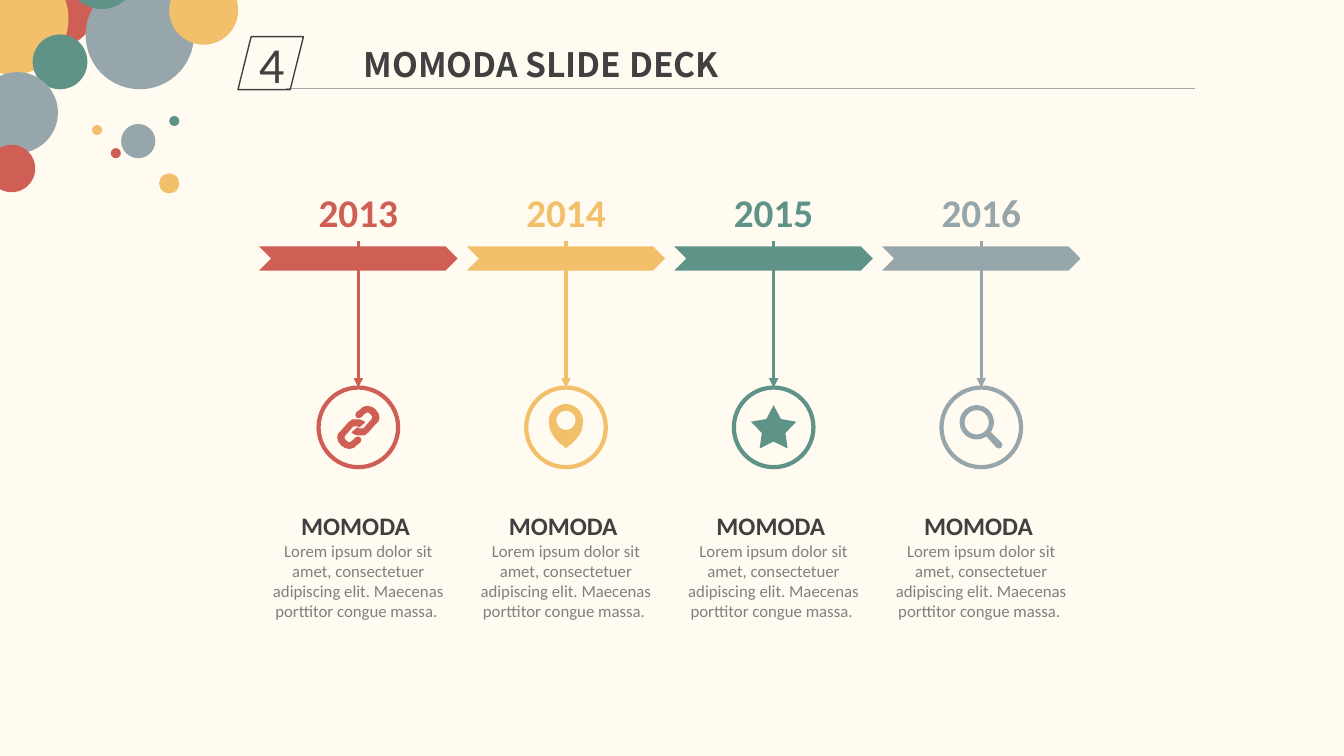
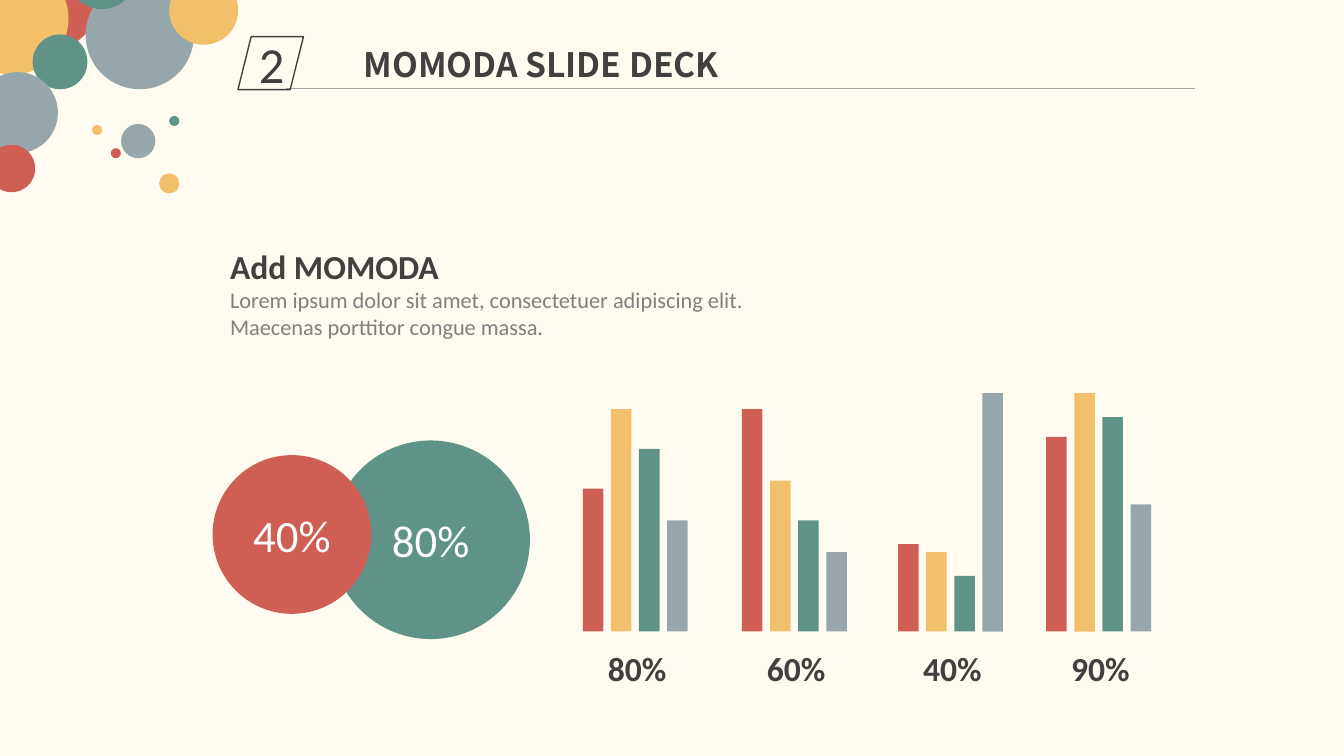
import dataclasses
import math

import lxml.etree
import pptx
import pptx.dml.color
import pptx.enum.shapes
import pptx.enum.text
import pptx.oxml.ns
import pptx.util

KIND = pptx.enum.shapes.MSO_SHAPE
ALIGN = pptx.enum.text.PP_ALIGN
ANCHOR = pptx.enum.text.MSO_ANCHOR


@dataclasses.dataclass(frozen=True)
class Theme:
    """Colours, fonts and type sizes of the deck."""
    back: str = "FFFBF0"
    red: str = "CF5F55"
    gold: str = "F2C06B"
    green: str = "5F9387"
    gray: str = "97A6AB"
    dark: str = "404040"
    soft: str = "808080"
    rule: str = "A6A6A6"
    white: str = "FFFFFF"
    face: str = "Calibri"
    head: str = "Noto Sans CJK SC"
    mark: int = 36
    big: int = 32
    year: int = 28
    title: int = 24
    name: int = 18
    body: int = 16
    small: int = 12

    @property
    def tones(self):
        """Give the four accent colours in order."""
        return self.red, self.gold, self.green, self.gray


THEME = Theme()
WIDE, HIGH = 133.4, 75
LEFT, PITCH, SPAN = 25.72, 20.61, 19.7
FLOOR, UNIT, BAR, STEP = 62.65, 3.94, 2.04, 2.79
LOREM = ("Lorem ipsum dolor sit amet, consectetuer adipiscing elit. "
         "Maecenas porttitor congue massa.")
BUBBLES = (
    (0.4, -4.4, 9.3, THEME.red), (-4.3, -3.7, 11.1, THEME.gold),
    (3.24, 3.42, 5.44, THEME.green), (-2.3, 7.15, 8.05, THEME.gray),
    (8.5, -1.9, 10.75, THEME.gray), (6.7, -5.9, 6.8, THEME.green),
    (-1.2, 14.37, 4.7, THEME.red), (12.02, 12.3, 3.4, THEME.gray),
    (11, 14.7, 1, THEME.red), (9.14, 12.4, 1, THEME.gold),
    (16.8, 11.5, 1, THEME.green), (15.8, 17.2, 2, THEME.gold),
    (16.8, -2.4, 6.84, THEME.gold))
LINK = (
    (-2, -8), (1, -8), (4, -7), (7, -5), (1, 0), (-1, -1), (-5, -1),
    (-12, 7), (-13.6, 9), (-13.6, 11), (-12, 13), (-10, 14.6), (-8, 14.6),
    (-6, 13), (-3, 10), (0, 9), (2, 10), (3, 12), (2, 15), (-2, 18),
    (-4.5, 20.4), (-9, 21.4), (-13.5, 20.4), (-17, 18), (-20, 14),
    (-21, 10), (-20, 6), (-17, 3), (-10, -5), (-6, -8))
GRIP = ((9, 4), (20, 15), (21, 17), (20, 20), (18, 21), (15, 20), (5, 9))
SIDE = ((16, 2), (13, 8), (10, 12), (6, 16), (3, 18))
BARS = (
    (57.85, "80%", (3.6, 5.6, 4.6, 2.8)),
    (73.65, "60%", (5.6, 3.8, 2.8, 2)),
    (89.14, "40%", (2.2, 2, 1.4, 6)),
    (103.85, "90%", (4.9, 6, 5.4, 3.2)))


def cell(count):
    """Turn a count of grid cells, a tenth of an inch each, into a length."""
    return pptx.util.Emu(round(count * 91440))


def cells(*counts):
    """Turn several counts of cells into lengths."""
    return [cell(count) for count in counts]


def tint(code):
    """Turn a hex code into a colour."""
    return pptx.dml.color.RGBColor.from_string(code)


def style(font, size, tone, bold=False, face=THEME.face):
    """Set the look of a font."""
    font.name, font.size, font.bold = face, pptx.util.Pt(size), bold
    font.color.rgb = tint(tone)


def write(frame, lines, align=ALIGN.CENTER, anchor=ANCHOR.TOP):
    """Fill a text frame with one styled run per paragraph."""
    frame.word_wrap = True
    frame.auto_size = pptx.enum.text.MSO_AUTO_SIZE.NONE
    frame.vertical_anchor = anchor
    for rank, (words, *look) in enumerate(lines):
        para = frame.add_paragraph() if rank else frame.paragraphs[0]
        para.alignment = align
        run = para.add_run()
        run.text = words
        style(run.font, *look)


def paint(shape, fill=None, line=None, width=1):
    """Give a shape a flat fill or a plain outline."""
    shape.shadow.inherit = False
    if fill:
        shape.fill.solid()
        shape.fill.fore_color.rgb = tint(fill)
    else:
        shape.fill.background()
    if line:
        shape.line.color.rgb = tint(line)
        shape.line.width = pptx.util.Pt(width)
    else:
        shape.line.fill.background()
    return shape


def draw(shapes, kind, box, **look):
    """Add a preset shape in a box of cells."""
    return paint(shapes.add_shape(kind, *cells(*box)), **look)


def label(slide, box, lines, align=ALIGN.CENTER):
    """Add a text box."""
    write(slide.shapes.add_textbox(*cells(*box)).text_frame, lines, align)


def join(slide, start, end, tone, width, arrow=False):
    """Add a straight line, with an arrowhead if asked."""
    line = slide.shapes.add_connector(
        pptx.enum.shapes.MSO_CONNECTOR.STRAIGHT, *cells(*start, *end))
    line.line.color.rgb = tint(tone)
    line.line.width = pptx.util.Pt(width)
    if arrow:
        stroke = line.line._get_or_add_ln()
        tail = lxml.etree.SubElement(stroke, pptx.oxml.ns.qn("a:tailEnd"))
        tail.set("type", "triangle")
    lxml.etree.SubElement(line._element.spPr, pptx.oxml.ns.qn("a:effectLst"))
    return line


def arc(x, y, reach, start=0, end=360):
    """List points along an arc, in hundredths of an inch."""
    turns = [math.radians(start + (end - start) * k / 36) for k in range(37)]
    return [(x + reach * math.cos(t), y + reach * math.sin(t)) for t in turns]


def trace(slide, x, y, loops, tone):
    """Draw closed loops around a centre as one outline."""
    pen = None
    for loop in loops:
        first, *rest = [(10 * px, 10 * py) for px, py in loop]
        if pen is None:
            pen = slide.shapes.build_freeform(*first, scale=914.4)
        else:
            pen.move_to(*first)
        pen.add_line_segments(rest, close=True)
    paint(pen.convert_to_shape(*cells(x, y)), fill=tone)


def chain(slide, x, y, tone):
    """Draw two links, each the other turned half round."""
    trace(slide, x, y, (LINK, [(-px, -py) for px, py in LINK]), tone)


def pin(slide, x, y, tone):
    """Draw a map pin."""
    back = [(-px, py) for px, py in reversed(SIDE)]
    rim = arc(0, -6, 17, 170, 370) + [*SIDE, (0, 21), *back]
    trace(slide, x, y, (rim, arc(0, -7, 9.5)), tone)


def star(slide, x, y, tone):
    """Draw a plump star."""
    shape = draw(slide.shapes, KIND.STAR_5_POINT,
                 (x - 2.25, y - 2.2, 4.5, 4.3), fill=tone)
    shape.adjustments[0] = 0.26


def lens(slide, x, y, tone):
    """Draw a hand lens."""
    rim = arc(-4.5, -5, 17, 55, 395) + list(GRIP)
    trace(slide, x, y, (rim, arc(-4.5, -5, 12)), tone)


def start(deck, mark, title):
    """Add a slide with bubbles, mark, rule and title."""
    slide = deck.slides.add_slide(deck.slide_layouts[5])
    group = slide.shapes.add_group_shape()
    for x, y, size, tone in BUBBLES:
        draw(group.shapes, KIND.OVAL, (x, y, size, size), fill=tone)
    join(slide, (28.4, 8.8), (118.6, 8.8), THEME.rule, 0.5)
    badge = draw(slide.shapes, KIND.PARALLELOGRAM, (23.62, 3.64, 6.5, 5.25),
                 line=THEME.dark)
    write(badge.text_frame, [(mark, THEME.mark, THEME.dark)],
          anchor=ANCHOR.MIDDLE)
    head = slide.shapes.title
    head.left, head.top, head.width, head.height = cells(35.1, 3.85, 51.3, 5)
    write(head.text_frame,
          [(title, THEME.title, THEME.dark, True, THEME.head)], ALIGN.LEFT)
    return slide


def stage(slide, rank, tone, icon):
    """Draw one year of the time line."""
    left = LEFT + PITCH * rank
    mid, ring, top = left + SPAN / 2, 7.9, 38.45
    draw(slide.shapes, KIND.CHEVRON, (left, 24.45, SPAN, 2.4), fill=tone)
    label(slide, (left, 18.2, SPAN, 5.7),
          [(str(2013 + rank), THEME.year, tone, True)])
    label(slide, (left, 50.13, SPAN, 12.1),
          [("MOMODA ", THEME.name, THEME.dark, True),
           (LOREM + " ", THEME.small, THEME.soft)])
    hoop = draw(slide.shapes, KIND.OVAL, (mid - ring / 2, top, ring, ring),
                line=tone, width=3)
    line = join(slide, (mid, 23.9), (mid, top), tone, 2.25, arrow=True)
    line.end_connect(hoop, 0)
    icon(slide, mid, top + ring / 2, tone)


def disc(slide, box, words, tone):
    """Draw a filled disc with a share in it."""
    shape = draw(slide.shapes, KIND.OVAL, box, fill=tone)
    write(shape.text_frame, [(words, THEME.big, THEME.white)],
          anchor=ANCHOR.MIDDLE)


def stand(slide, left, words, row):
    """Draw a cluster of bars on the floor with a share below."""
    for rank, (count, tone) in enumerate(zip(row, THEME.tones)):
        tall = count * UNIT
        draw(slide.shapes, KIND.RECTANGLE,
             (left + STEP * rank, FLOOR - tall, BAR, tall), fill=tone)
    label(slide, (left + 1.43, 63.8, 7.9, 5),
          [(words, THEME.title, THEME.dark, True)])


def main():
    """Build and save the deck."""
    deck = pptx.Presentation()
    deck.slide_width, deck.slide_height = cells(WIDE, HIGH)
    fill = deck.slide_master.background.fill
    fill.solid()
    fill.fore_color.rgb = tint(THEME.back)

    title = "MOMODA SLIDE DECK"
    years = start(deck, "4", title)
    for rank, icon in enumerate((chain, pin, star, lens)):
        stage(years, rank, THEME.tones[rank], icon)

    stats = start(deck, "2", title)
    disc(stats, (32.9, 43.7, 19.7, 19.7), "80%", THEME.green)
    disc(stats, (21.1, 45.15, 15.75, 15.75), "40%", THEME.red)
    for left, words, row in BARS:
        stand(stats, left, words, row)
    label(stats, (21.85, 23.9, 55, 10.4),
          [("Add MOMODA", THEME.title, THEME.dark, True),
           (LOREM, THEME.body, THEME.soft)], ALIGN.LEFT)
    deck.save("out.pptx")


if __name__ == "__main__":
    main()
